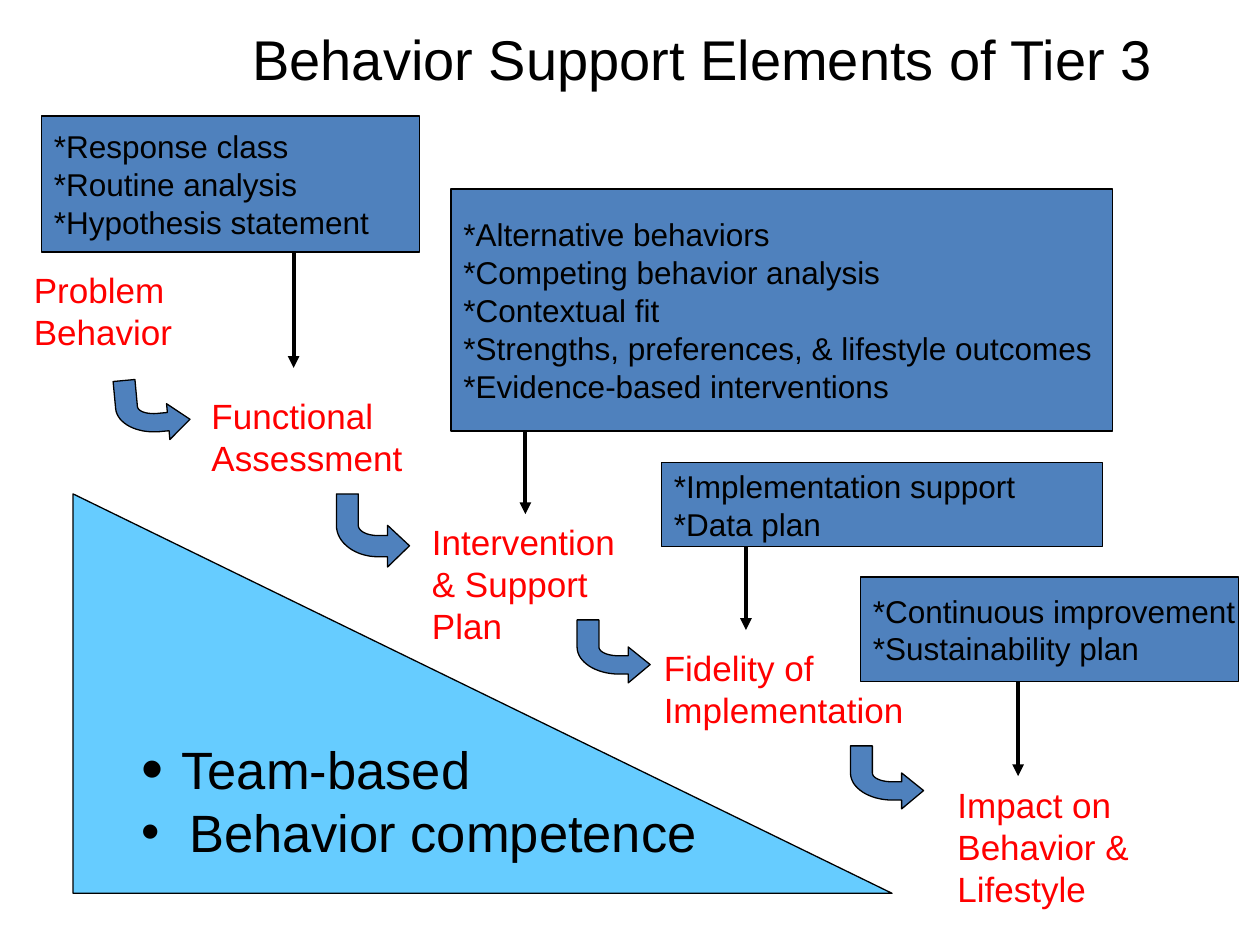
from lxml import etree
from pptx import Presentation
from pptx.dml.color import RGBColor
from pptx.enum import shapes as kinds, text as t
from pptx.oxml import ns
from pptx.util import Inches, Pt

COLORS = {"box": "4F81BD", "wedge": "66CCFF", "step": "FF0000", "ink": "000000"}
STEPS = [
    (0.17, 2.08, 1.33, 0.77, "Problem Behavior"),
    (1.58, 3.08, 1.75, 0.77, "Functional Assessment"),
    (3.33, 4.08, 1.67, 1.1, "Intervention & Support Plan"),
    (5.17, 5.08, 2.17, 0.77, "Fidelity of Implementation"),
    (7.5, 6.17, 1.92, 1.1, "Impact on Behavior & Lifestyle"),
]
TURNS = [
    (0.92, 3, 0.58, 0.5, -5.3),
    (2.67, 3.92, 0.58, 0.58, 0),
    (4.58, 4.92, 0.58, 0.5, 0),
    (6.75, 5.92, 0.58, 0.5, 0),
]
BOXES = [
    (0.33, 0.92, 3, 1.08, 2, 0.92,
     ["*Response class", "*Routine analysis", "*Hypothesis statement"]),
    (3.58, 1.5, 5.25, 1.92, 0.59, 0.66,
     ["*Alternative behaviors", "*Competing behavior analysis", "*Contextual fit",
      "*Strengths, preferences, & lifestyle outcomes", "*Evidence-based interventions"]),
    (5.25, 3.67, 3.5, 0.67, 0.67, 0.66, ["*Implementation support", "*Data plan"]),
    (6.83, 4.58, 3, 0.83, 1.25, 0.75, ["*Continuous improvement", "*Sustainability plan"]),
]


def color(name):
    return RGBColor.from_string(COLORS[name])


def write(shape, lines, size, ink="ink", align=t.PP_ALIGN.LEFT,
          anchor=t.MSO_ANCHOR.MIDDLE, wrap=False):
    frame = shape.text_frame
    frame.word_wrap = wrap
    frame.vertical_anchor = anchor
    frame.text = "\n".join(lines)
    for para in frame.paragraphs:
        para.alignment = align
        for run in para.runs:
            run.font.name = "Arial"
            run.font.size = Pt(size)
            run.font.color.rgb = color(ink)
    return frame


def paint(shape, fill):
    shape.shadow.inherit = False
    shape.fill.solid()
    shape.fill.fore_color.rgb = color(fill)
    shape.line.color.rgb = color("ink")
    shape.line.width = Pt(0.75)


def arrow(slide, x, y, drop):
    line = slide.shapes.add_connector(
        kinds.MSO_CONNECTOR.STRAIGHT, Inches(x), Inches(y), Inches(x), Inches(y + drop))
    line.line.color.rgb = color("ink")
    line.line.width = Pt(2.25)
    etree.SubElement(line.line._get_or_add_ln(), ns.qn("a:tailEnd"), type="triangle")
    etree.SubElement(line._element.spPr, ns.qn("a:effectLst"))


def title(slide, x, y, w, h):
    box = slide.shapes.add_textbox(Inches(x), Inches(y), Inches(w), Inches(h))
    write(box, ["Behavior Support Elements of Tier 3"], 32,
          align=t.PP_ALIGN.RIGHT, wrap=True)


def step(slide, x, y, w, h, words):
    box = slide.shapes.add_textbox(Inches(x), Inches(y), Inches(w), Inches(h))
    write(box, [words], 20, ink="step", anchor=t.MSO_ANCHOR.TOP, wrap=True)


def curve(a, b, c, d, count=16):
    points = []
    for i in range(1, count + 1):
        k = i / count
        parts = ((1 - k) ** 3, 3 * k * (1 - k) ** 2, 3 * k * k * (1 - k), k ** 3)
        points.append(tuple(sum(p * q[n] for p, q in zip(parts, (a, b, c, d)))
                            for n in (0, 1)))
    return points


def turn(slide, x, y, w, h, angle):
    outer = curve((0.57, 0.86), (0.26, 0.86), (0, 0.67), (0, 0.43))
    inner = curve((0.3, 0.43), (0.3, 0.51), (0.42, 0.57), (0.57, 0.57))
    points = [(1, 0.71), (0.7, 1), (0.7, 0.86), (0.57, 0.86), *outer, (0, 0),
              (0.3, 0), (0.3, 0.43), *inner, (0.7, 0.57), (0.7, 0.43)]
    spots = [(Inches(x + w * px), Inches(y + h * py)) for px, py in points]
    path = slide.shapes.build_freeform(*spots[0])
    path.add_line_segments(spots[1:], close=True)
    shape = path.convert_to_shape()
    paint(shape, "box")
    shape.rotation = angle


def detail(slide, x, y, w, h, shift, drop, lines):
    box = slide.shapes.add_shape(
        kinds.MSO_SHAPE.RECTANGLE, Inches(x), Inches(y), Inches(w), Inches(h))
    paint(box, "box")
    write(box, lines, 18)
    arrow(slide, x + shift, y + h, drop)


def wedge(slide, x, y, w, h):
    shape = slide.shapes.add_shape(
        kinds.MSO_SHAPE.RIGHT_TRIANGLE, Inches(x), Inches(y), Inches(w), Inches(h))
    paint(shape, "wedge")
    frame = write(shape, ["Team-based", "Behavior competence"], 30)
    frame.margin_left = frame.margin_right = 0
    for para, indent, scale in zip(frame.paragraphs, (0.32, 0.38), (120, 100)):
        props = para._p.get_or_add_pPr()
        props.set("marL", str(Inches(indent)))
        props.set("indent", str(-Inches(indent)))
        para.line_spacing = scale / 100
        etree.SubElement(props, ns.qn("a:buSzPct"), val=str(scale * 1000))
        etree.SubElement(props, ns.qn("a:buFont"), typeface="Arial")
        etree.SubElement(props, ns.qn("a:buChar"), char="•")


def main():
    deck = Presentation()
    deck.slide_width, deck.slide_height = Inches(10), Inches(7.5)
    slide = deck.slides.add_slide(deck.slide_layouts[6])
    title(slide, 0.75, 0, 8.5, 0.92)
    for item in STEPS:
        step(slide, *item)
    for item in TURNS:
        turn(slide, *item)
    for item in BOXES:
        detail(slide, *item)
    wedge(slide, 0.58, 3.92, 6.5, 3.17)
    deck.save("out.pptx")


if __name__ == "__main__":
    main()
